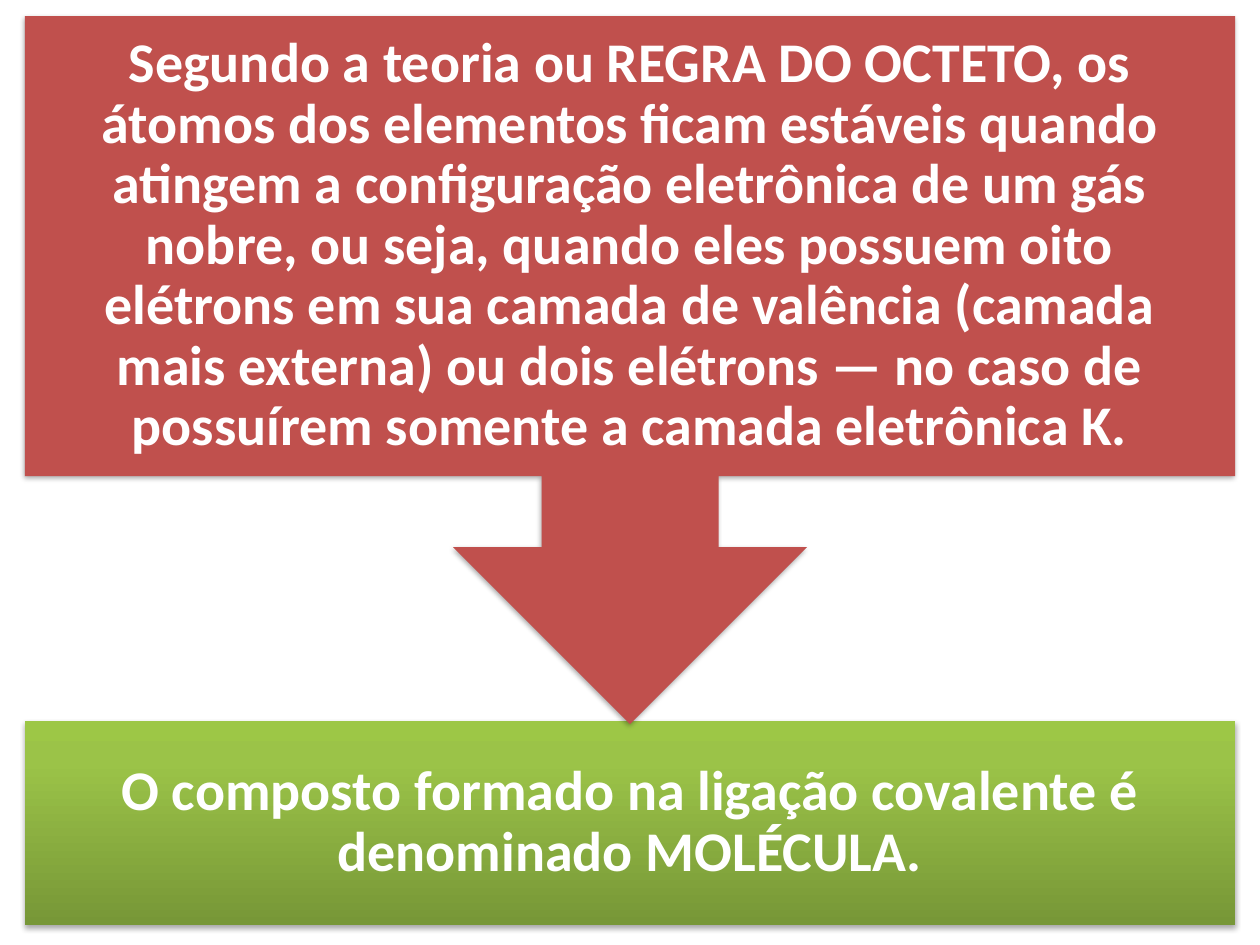
from copy import deepcopy
from dataclasses import dataclass

from lxml import etree
from pptx import Presentation
from pptx.dml.color import RGBColor
from pptx.enum.shapes import MSO_SHAPE
from pptx.enum.text import MSO_ANCHOR, PP_ALIGN
from pptx.oxml.ns import qn
from pptx.util import Pt

BOX = MSO_SHAPE.RECTANGLE
CALLOUT = MSO_SHAPE.UP_ARROW_CALLOUT
MIDDLE = MSO_ANCHOR.MIDDLE
CENTER = PP_ALIGN.CENTER
BLANK_LAYOUT = 6


@dataclass(frozen=True)
class Theme:
    font: str = "Calibri"
    size: float = 32
    text: str = "FFFFFF"
    rule: str = "C0504D"
    result: tuple = ((0, "779737"), (0.8, "9BC348"), (1, "9DC746"))
    shadow: str = "000000"


THEME = Theme()
SLIDE_WIDTH, SLIDE_HEIGHT = 720, 540
MARGIN = 14.2
WIDTH = SLIDE_WIDTH - 2 * MARGIN
INSET = 18
RULE_TOP, RULE_HEIGHT, RULE_TEXT_HEIGHT = 9.2, 404.6, 262.9
RESULT_TOP, RESULT_HEIGHT = 412, 116.5

RULE_RUNS = (
    "Segundo a teoria ou\u00a0REGRA DO OCTETO, os átomos dos elementos ficam "
    "estáveis quando atingem a configuração eletrônica de um gás nobre, ou seja, "
    "quando eles possuem oito elétrons em sua camada de valência (camada mais "
    "externa) ou dois elétrons — no caso de possuírem somente a camada "
    "eletrônica K.",
)
RESULT_RUNS = ("O composto formado na ligação covalente é denominado MOLÉCULA.",)


def add_shadow(panel):
    panel.shadow.inherit = False
    effects = panel._element.spPr.find(qn("a:effectLst"))
    shadow = etree.SubElement(
        effects, qn("a:outerShdw"), blurRad=str(Pt(3.15)), dist=str(Pt(1.8)),
        dir="5400000", rotWithShape="0")
    color = etree.SubElement(shadow, qn("a:srgbClr"), val=THEME.shadow)
    etree.SubElement(color, qn("a:alpha"), val="35000")


def fill_gradient(panel, stops):
    panel.fill.gradient()
    panel.fill.gradient_angle = 90
    stop_list = panel._element.spPr.find(qn("a:gradFill")).find(qn("a:gsLst"))
    while len(stop_list) < len(stops):
        stop_list.append(deepcopy(stop_list[-1]))
    for stop, (position, color) in zip(panel.fill.gradient_stops, stops):
        stop.position = position
        stop.color.rgb = RGBColor.from_string(color)


def add_panel(slide, kind, top, height):
    panel = slide.shapes.add_shape(kind, Pt(MARGIN), Pt(top), Pt(WIDTH), Pt(height))
    panel.line.fill.background()
    add_shadow(panel)
    return panel


def add_statement(slide, top, height, runs):
    statement = slide.shapes.add_textbox(Pt(MARGIN), Pt(top), Pt(WIDTH), Pt(height))
    frame = statement.text_frame
    frame.word_wrap = True
    frame.vertical_anchor = MIDDLE
    frame.margin_left = frame.margin_right = Pt(INSET)
    frame.margin_top = frame.margin_bottom = Pt(INSET)
    paragraph = frame.paragraphs[0]
    paragraph.alignment = CENTER
    paragraph.line_spacing = 0.9
    paragraph.space_after = Pt(0.35 * THEME.size)
    for words in runs:
        run = paragraph.add_run()
        run.text = words
        run.font.name = THEME.font
        run.font.size = Pt(THEME.size)
        run.font.bold = True
        run.font.color.rgb = RGBColor.from_string(THEME.text)


def main():
    deck = Presentation()
    deck.slide_width, deck.slide_height = Pt(SLIDE_WIDTH), Pt(SLIDE_HEIGHT)
    slide = deck.slides.add_slide(deck.slide_layouts[BLANK_LAYOUT])

    result = add_panel(slide, BOX, RESULT_TOP, RESULT_HEIGHT)
    fill_gradient(result, THEME.result)
    add_statement(slide, RESULT_TOP, RESULT_HEIGHT, RESULT_RUNS)

    octet_rule = add_panel(slide, CALLOUT, RULE_TOP, RULE_HEIGHT)
    octet_rule.rotation = 180
    octet_rule.fill.solid()
    octet_rule.fill.fore_color.rgb = RGBColor.from_string(THEME.rule)
    add_statement(slide, RULE_TOP, RULE_TEXT_HEIGHT, RULE_RUNS)

    deck.save("out.pptx")


if __name__ == "__main__":
    main()
